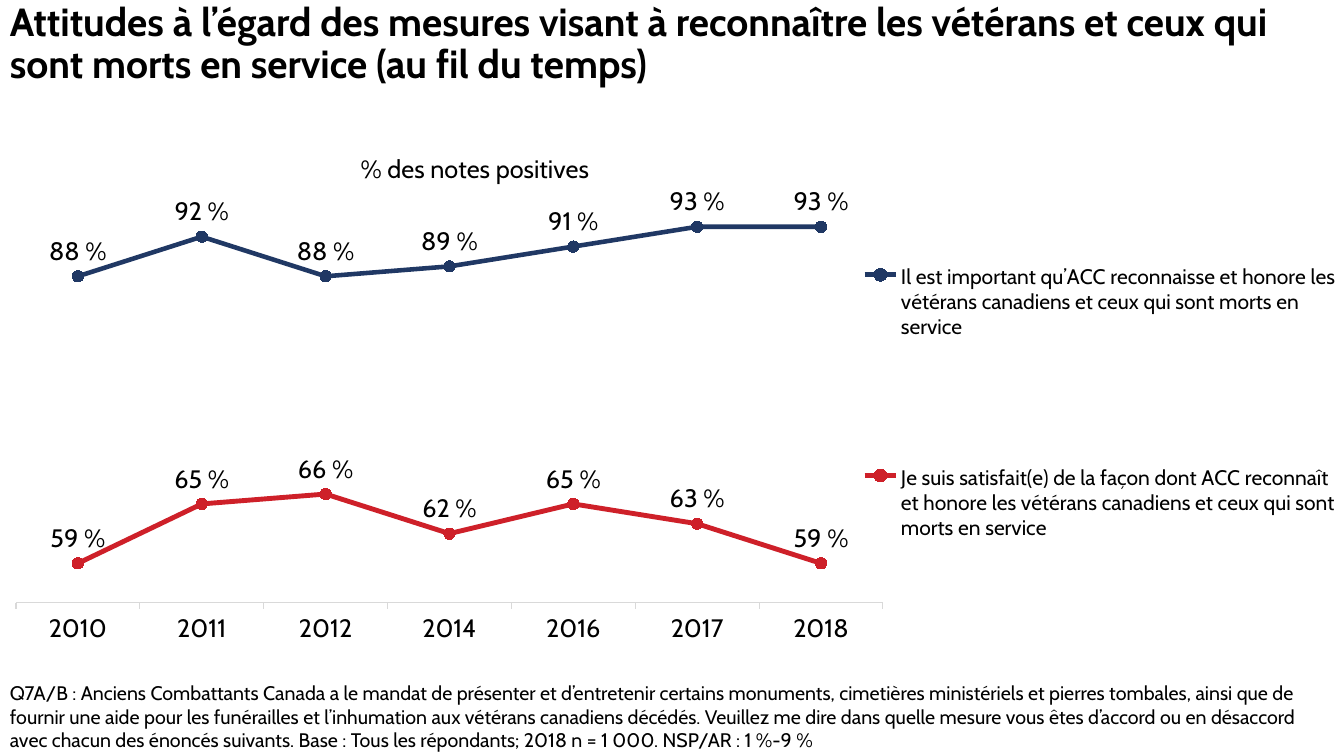
from lxml.etree import SubElement
from pptx import Presentation
from pptx.chart.data import CategoryChartData
from pptx.dml.color import RGBColor
from pptx.enum.chart import XL_CHART_TYPE, XL_LABEL_POSITION, XL_LEGEND_POSITION, XL_MARKER_STYLE, XL_TICK_LABEL_POSITION, XL_TICK_MARK
from pptx.enum.text import MSO_ANCHOR
from pptx.oxml.ns import qn
from pptx.util import Pt

COLORS = {"ink": "000000", "axis": "D9D9D9", "important": "203864", "satisfied": "CE2029"}
YEARS = ["2010", "2011", "2012", "2014", "2016", "2017", "2018"]
SERIES = [
    ("Il est important qu’ACC reconnaisse et honore les vétérans canadiens et ceux qui sont morts en service",
     [0.88, 0.92, 0.88, 0.89, 0.91, 0.93, 0.93], "important", 3.25),
    ("Je suis satisfait(e) de la façon dont ACC reconnaît et honore les vétérans canadiens et ceux qui sont morts en service",
     [0.59, 0.65, 0.66, 0.62, 0.65, 0.63, 0.59], "satisfied", 3.5),
]
TITLE = "Attitudes à l’égard des mesures visant à reconnaître les vétérans et ceux qui sont morts en service (au fil du temps)"
QUESTION = (
    "Q7A/B : Anciens Combattants Canada a le mandat de présenter et d’entretenir certains monuments, "
    "cimetières ministériels et pierres tombales, ainsi que de fournir une aide pour les funérailles et "
    "l’inhumation aux vétérans canadiens décédés. Veuillez me dire dans quelle mesure vous êtes d’accord "
    "ou en désaccord avec chacun des énoncés suivants. Base : Tous les répondants; 2018 n = 1 000. "
    "NSP/AR : 1 %-9 %"
)


class SlideBuilder:
    font_name = "Cabin"
    scale = 914400 / 100.8

    def __init__(self, deck):
        self.page = deck.slides.add_slide(deck.slide_layouts[6])

    @classmethod
    def emu(cls, *lengths):
        return [round(length * cls.scale) for length in lengths]

    def color(self, name):
        return RGBColor.from_string(COLORS[name])

    def style(self, font, size, bold=False):
        font.name = self.font_name
        font.size = Pt(size)
        font.bold = bold
        font.color.rgb = self.color("ink")

    def text(self, place, content, size, bold=False, anchor=MSO_ANCHOR.TOP, line_spacing=1.0):
        box = self.page.shapes.add_textbox(*self.emu(*place))
        frame = box.text_frame
        frame.word_wrap = True
        frame.vertical_anchor = anchor
        para = frame.paragraphs[0]
        para.line_spacing = line_spacing
        span = para.add_run()
        span.text = content
        self.style(span.font, size, bold)

    def arrange(self, element, chart_place, place, target=None):
        chart_left, chart_top, chart_width, chart_height = chart_place
        left, top, *extent = place
        values = {"x": (left - chart_left) / chart_width, "y": (top - chart_top) / chart_height}
        if extent:
            values.update(w=extent[0] / chart_width, h=extent[1] / chart_height)
        layout = element.get_or_add_layout() if hasattr(element, "get_or_add_layout") else element.find(qn("c:layout"))
        if layout is None:
            layout = SubElement(element, qn("c:layout"))
            element.insert(0, layout)
        for child in list(layout):
            layout.remove(child)
        manual = SubElement(layout, qn("c:manualLayout"))
        if target:
            SubElement(manual, qn("c:layoutTarget")).set("val", target)
        for axis in ("x", "y"):
            SubElement(manual, qn(f"c:{axis}Mode")).set("val", "edge")
        for key, value in values.items():
            SubElement(manual, qn(f"c:{key}")).set("val", f"{value:.4f}")

    def line_chart(self, place, heading, heading_place, plot_place, legend_place):
        data = CategoryChartData(number_format="0%")
        data.categories = YEARS
        for name, values, *_ in SERIES:
            data.add_series(name, values)
        chart = self.page.shapes.add_chart(XL_CHART_TYPE.LINE_MARKERS, *self.emu(*place), data).chart
        self.style(chart.font, 16)

        chart.has_title = True
        span = chart.chart_title.text_frame.paragraphs[0].add_run()
        span.text = heading
        self.style(span.font, 18)
        chart.chart_title.include_in_layout = False

        chart.has_legend = True
        chart.legend.position = XL_LEGEND_POSITION.RIGHT
        chart.legend.include_in_layout = False
        self.style(chart.legend.font, 15)

        years = chart.category_axis
        years.major_tick_mark = XL_TICK_MARK.OUTSIDE
        years.tick_label_position = XL_TICK_LABEL_POSITION.LOW
        years.format.line.color.rgb = self.color("axis")
        years.format.line.width = Pt(0.75)
        self.style(years.tick_labels.font, 18)
        shares = chart.value_axis
        shares.minimum_scale, shares.maximum_scale = 0.55, 0.95
        shares.has_major_gridlines = False
        shares.visible = False

        plot = chart.plots[0]
        plot.vary_by_categories = False
        for series, (_, _, color, width) in zip(plot.series, SERIES):
            self.line_series(series, color, width)

        self.arrange(chart.chart_title._element, place, heading_place)
        self.arrange(chart.legend._element, place, legend_place)
        plot_area = chart._chartSpace.chart.plotArea
        self.arrange(plot_area, place, plot_place, "inner")

    def line_series(self, series, color, width):
        series.smooth = False
        series.format.line.color.rgb = self.color(color)
        series.format.line.width = Pt(width)
        marker = series.marker
        marker.style = XL_MARKER_STYLE.CIRCLE
        marker.size = 8
        marker.format.fill.solid()
        marker.format.fill.fore_color.rgb = self.color(color)
        marker.format.line.color.rgb = self.color(color)
        labels = series.data_labels
        labels.show_value = True
        labels.position = XL_LABEL_POSITION.ABOVE
        labels.number_format = "0\\ %"
        labels.number_format_is_linked = False
        self.style(labels.font, 18)


def main():
    deck = Presentation()
    deck.slide_width, deck.slide_height = SlideBuilder.emu(1344, 756)
    builder = SlideBuilder(deck)
    builder.line_chart(
        (0, 119, 1344, 548), "% des notes positives",
        heading_place=(356, 147), plot_place=(16, 207, 867, 396), legend_place=(860, 139, 484, 527),
    )
    builder.text((0, 0, 1344, 89), TITLE, 28, bold=True, anchor=MSO_ANCHOR.MIDDLE, line_spacing=0.9)
    builder.text((0, 676, 1344, 82), QUESTION, 14)
    deck.save("out.pptx")


if __name__ == "__main__":
    main()
